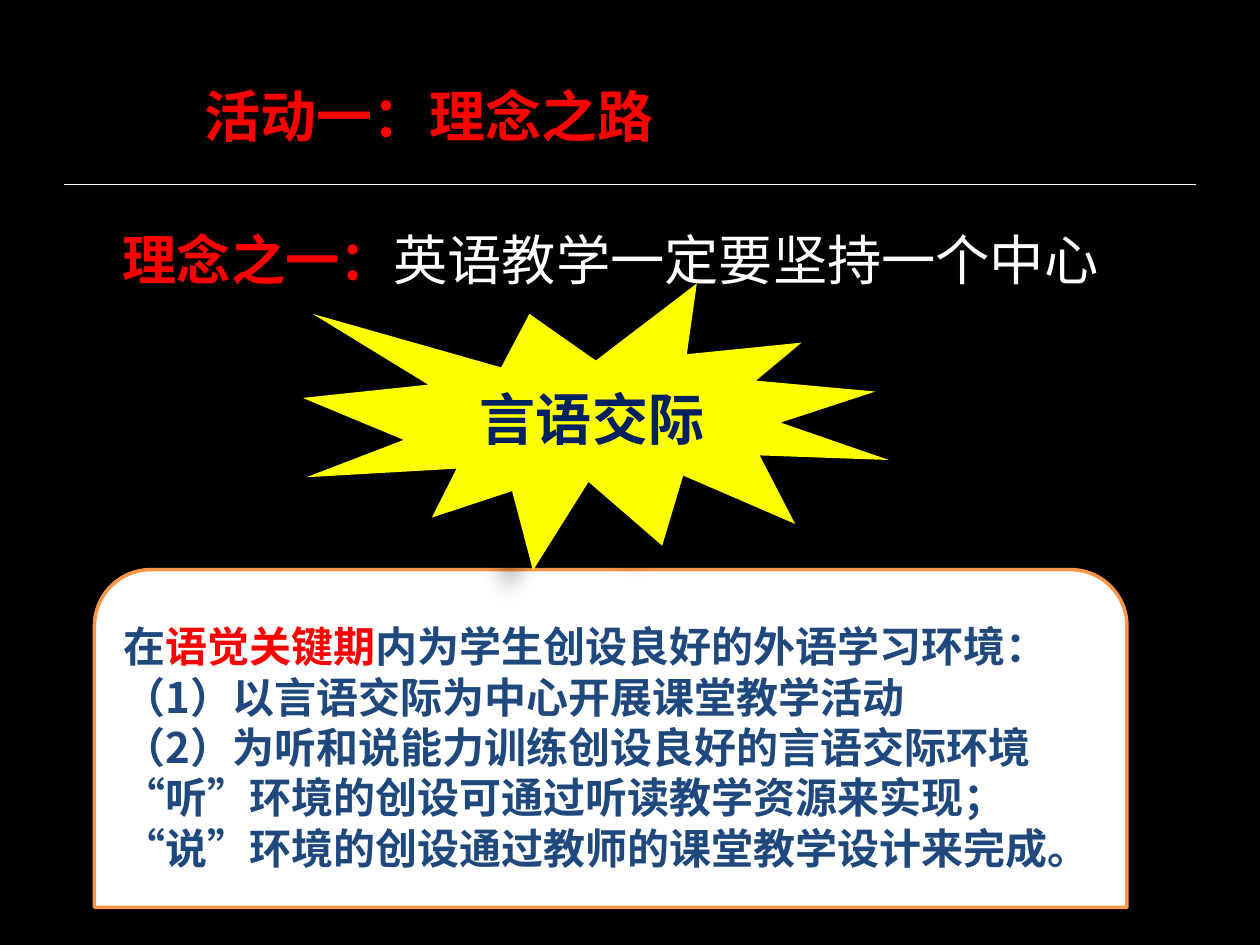
from lxml.etree import SubElement
from pptx import Presentation
from pptx.dml.color import RGBColor
from pptx.enum.shapes import MSO_CONNECTOR, MSO_SHAPE
from pptx.enum.text import MSO_ANCHOR as Anchor, PP_ALIGN as Align
from pptx.oxml.ns import qn
from pptx.util import Pt

FONT = "Noto Sans CJK SC"
BLACK = RGBColor(0, 0, 0)
WHITE = RGBColor(255, 255, 255)
RED = RGBColor(255, 0, 0)
YELLOW = RGBColor(255, 255, 0)
ORANGE = RGBColor(0xF7, 0x96, 0x46)
BLUE = RGBColor(0x1F, 0x49, 0x7D)
NAVY = RGBColor(0, 0x20, 0x60)

PANEL_LINES = [
    [("在", BLUE), ("语觉关键期", RED), ("内为学生创设良好的外语学习环境：", BLUE)],
    [("（1）以言语交际为中心开展课堂教学活动", BLUE)],
    [("（2）为听和说能力训练创设良好的言语交际环境", BLUE)],
    [("“听”环境的创设可通过听读教学资源来实现；", BLUE)],
    [("“说”环境的创设通过教师的课堂教学设计来完成。", BLUE)],
]


def add_run(paragraph, text, *, size, color, bold=True):
    """Append formatted text to a paragraph."""
    run = paragraph.add_run()
    run.text = text
    font = run.font
    font.size, font.bold, font.name = Pt(size), bold, FONT
    font.color.rgb = color
    SubElement(run._r.get_or_add_rPr(), qn("a:ea"), typeface=FONT)


def add_text_box(slide, box, anchor):
    """Add a wrapping text box and return its first paragraph."""
    frame = slide.shapes.add_textbox(*map(Pt, box)).text_frame
    frame.word_wrap = True
    frame.vertical_anchor = anchor
    return frame.paragraphs[0]


def add_filled_shape(slide, kind, box, fill):
    """Add a flat shape with a solid fill and centred wrapping text."""
    shape = slide.shapes.add_shape(kind, *map(Pt, box))
    shape.shadow.inherit = False
    shape.fill.solid()
    shape.fill.fore_color.rgb = fill
    shape.line.fill.background()
    shape.text_frame.word_wrap = True
    shape.text_frame.vertical_anchor = Anchor.MIDDLE
    return shape


def add_rule(slide, left, top, width):
    """Draw the thin rule under the title."""
    rule = slide.shapes.add_connector(
        MSO_CONNECTOR.STRAIGHT, Pt(left), Pt(top), Pt(left + width), Pt(top))
    rule.line.color.rgb = WHITE
    rule.line.width = Pt(0.75)
    SubElement(rule._element.spPr, qn("a:effectLst"))


def add_title(slide, box):
    """Place the activity title."""
    add_run(add_text_box(slide, box, Anchor.MIDDLE), "活动一：理念之路", size=32, color=RED)


def add_principle(slide, box):
    """Place the principle statement."""
    paragraph = add_text_box(slide, box, Anchor.TOP)
    paragraph._p.get_or_add_pPr().set("marL", str(Pt(27)))
    add_run(paragraph, "理念之一：", size=31, color=RED)
    add_run(paragraph, "英语教学一定要坚持一个中心", size=31, color=WHITE, bold=False)


def add_panel(slide, box):
    """Place the rounded panel of teaching advice."""
    panel = add_filled_shape(slide, MSO_SHAPE.ROUND_2_SAME_RECTANGLE, box, WHITE)
    panel.line.color.rgb = ORANGE
    panel.line.width = Pt(2)
    frame = panel.text_frame
    for index, runs in enumerate(PANEL_LINES):
        paragraph = frame.add_paragraph() if index else frame.paragraphs[0]
        paragraph.alignment = Align.LEFT
        for text, color in runs:
            add_run(paragraph, text, size=24, color=color)


def add_burst(slide, box):
    """Place the starburst with its soft shadow."""
    burst = add_filled_shape(slide, MSO_SHAPE.EXPLOSION1, box, YELLOW)
    effects = burst._element.spPr.find(qn("a:effectLst"))
    shadow = SubElement(
        effects, qn("a:outerShdw"), blurRad=str(Pt(11.8)), dist=str(Pt(19.7)),
        dir=str(141 * 60000), algn="ctr", rotWithShape="0")
    color = SubElement(shadow, qn("a:srgbClr"), val=str(BLACK))
    SubElement(color, qn("a:alpha"), val="28000")
    paragraph = burst.text_frame.paragraphs[0]
    paragraph.alignment = Align.CENTER
    add_run(paragraph, "言语交际", size=32, color=NAVY)


def main():
    """Build and save the presentation."""
    presentation = Presentation()
    presentation.slide_width, presentation.slide_height = Pt(720), Pt(540)
    slide = presentation.slides.add_slide(presentation.slide_layouts[6])
    slide.background.fill.solid()
    slide.background.fill.fore_color.rgb = BLACK
    add_rule(slide, 36.7, 105.5, 646.6)
    add_principle(slide, (36, 126, 648, 356))
    add_panel(slide, (54, 325.5, 590, 193))
    add_title(slide, (110, 43, 273, 46))
    add_burst(slide, (173, 162, 335, 164))
    presentation.save("out.pptx")


if __name__ == "__main__":
    main()
